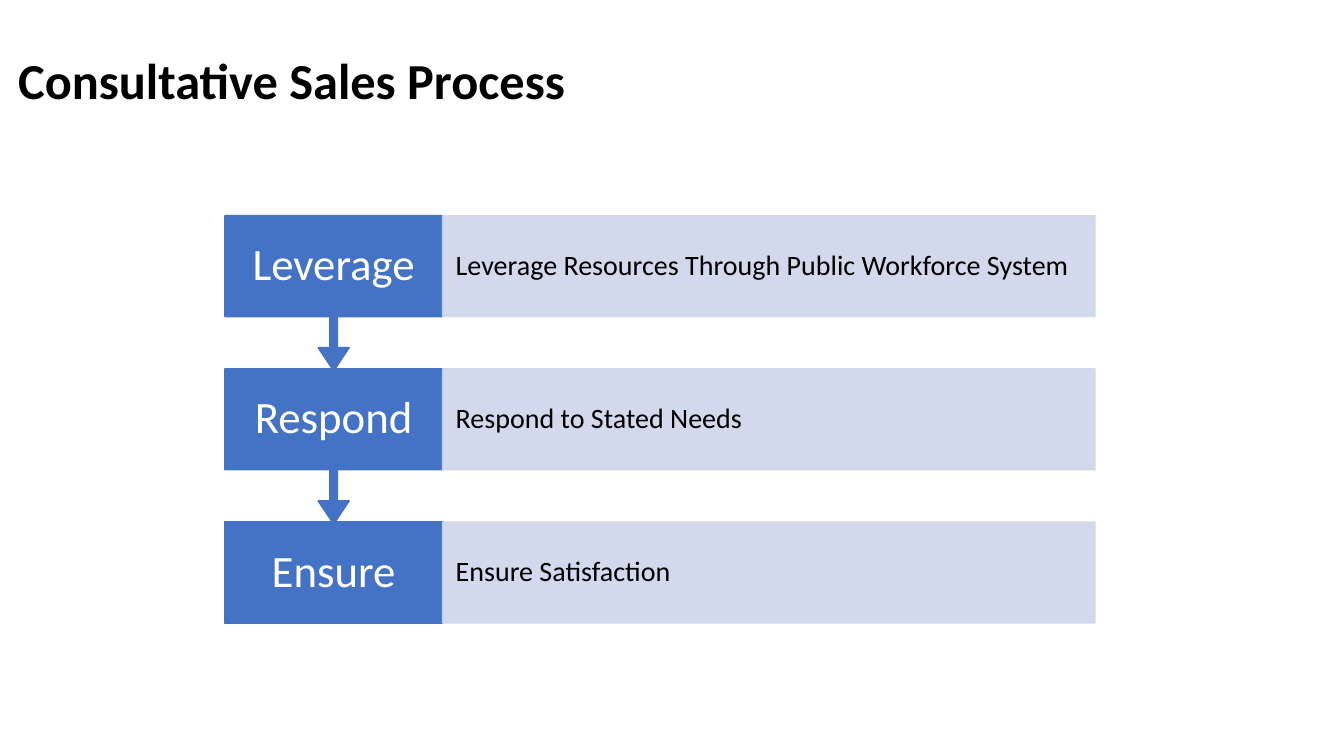
from lxml.etree import SubElement
from pptx import Presentation
from pptx.dml.color import RGBColor
from pptx.enum.shapes import MSO_SHAPE
from pptx.enum.text import MSO_ANCHOR, MSO_AUTO_SIZE, PP_ALIGN
from pptx.oxml.ns import qn
from pptx.util import Pt

PX = 9144  # 100 px to the inch
COLORS = {"step": "4472C4", "detail": "CFD5EA", "light": "FFFFFF", "dark": "000000"}
TITLE = {"size": Pt(36), "bold": True, "name": "Calibri"}
STEP = {"size": Pt(32), "name": "Calibri"}
DETAIL = {"size": Pt(20), "name": "Calibri"}

STEPS = [
    ("Leverage", "Leverage Resources Through Public Workforce System"),
    ("Respond", "Respond to Stated Needs"),
    ("Ensure", "Ensure Satisfaction"),
]
LEFT, TOP, PITCH = 223, 214, 152
STEP_W, DETAIL_W, ROW_H, CALLOUT_H = 216, 647, 100, 154
CALLOUT_ADJ = (0.05, 0.1, 0.15, 0.65)


def rgb(name):
    return RGBColor.from_string(COLORS[name])


def write(shape, text, fmt, color, align, inset=10, inset_v=5):
    tf = shape.text_frame
    frame = {
        "word_wrap": True,
        "auto_size": MSO_AUTO_SIZE.NONE,
        "vertical_anchor": MSO_ANCHOR.MIDDLE,
        "margin_left": inset * PX,
        "margin_right": inset * PX,
        "margin_top": inset_v * PX,
        "margin_bottom": inset_v * PX,
    }
    for key, value in frame.items():
        setattr(tf, key, value)
    p = tf.paragraphs[0]
    p.alignment, p.line_spacing = align, 0.9
    r = p.add_run()
    r.text = text
    for key, value in fmt.items():
        setattr(r.font, key, value)
    r.font.color.rgb = rgb(color)


def add_block(s, kind, box, color, alpha=None):
    sp = s.shapes.add_shape(kind, *(v * PX for v in box))
    sp.shadow.inherit = False
    sp.fill.solid()
    sp.fill.fore_color.rgb = rgb(color)
    sp.line.color.rgb = rgb(color)
    sp.line.width = Pt(1)
    if alpha is not None:
        for clr in sp.element.spPr.iter(qn("a:srgbClr")):
            SubElement(clr, qn("a:alpha")).set("val", str(alpha * 1000))
    return sp


def add_title(s, text):
    title = s.shapes.title
    title.left, title.top, title.width, title.height = (v * PX for v in (8, 0, 1104, 165))
    write(title, text, TITLE, "dark", PP_ALIGN.LEFT)


def add_step(s, name, y, last):
    if last:
        sp = add_block(s, MSO_SHAPE.RECTANGLE, (LEFT, y, STEP_W, ROW_H), "step")
    else:
        sp = add_block(s, MSO_SHAPE.DOWN_ARROW_CALLOUT, (LEFT, y, STEP_W, CALLOUT_H), "step")
        for i, value in enumerate(CALLOUT_ADJ):
            sp.adjustments[i] = value
    write(sp, name, STEP, "light", PP_ALIGN.CENTER, 15, 25)


def add_detail(s, text, y):
    sp = add_block(s, MSO_SHAPE.RECTANGLE, (LEFT + STEP_W, y, DETAIL_W, ROW_H), "detail", 90)
    write(sp, text, DETAIL, "dark", PP_ALIGN.LEFT, 13, 28)


def main():
    prs = Presentation()
    prs.slide_width, prs.slide_height = 1333 * PX, 750 * PX
    s = prs.slides.add_slide(prs.slide_layouts[5])
    add_title(s, "Consultative Sales Process")

    # Bottom row first, so each arrow tip lies over the step below
    for i, (name, text) in reversed(list(enumerate(STEPS))):
        y = TOP + i * PITCH
        add_step(s, name, y, last=i == len(STEPS) - 1)
        add_detail(s, text, y)

    prs.save("out.pptx")


if __name__ == "__main__":
    main()
